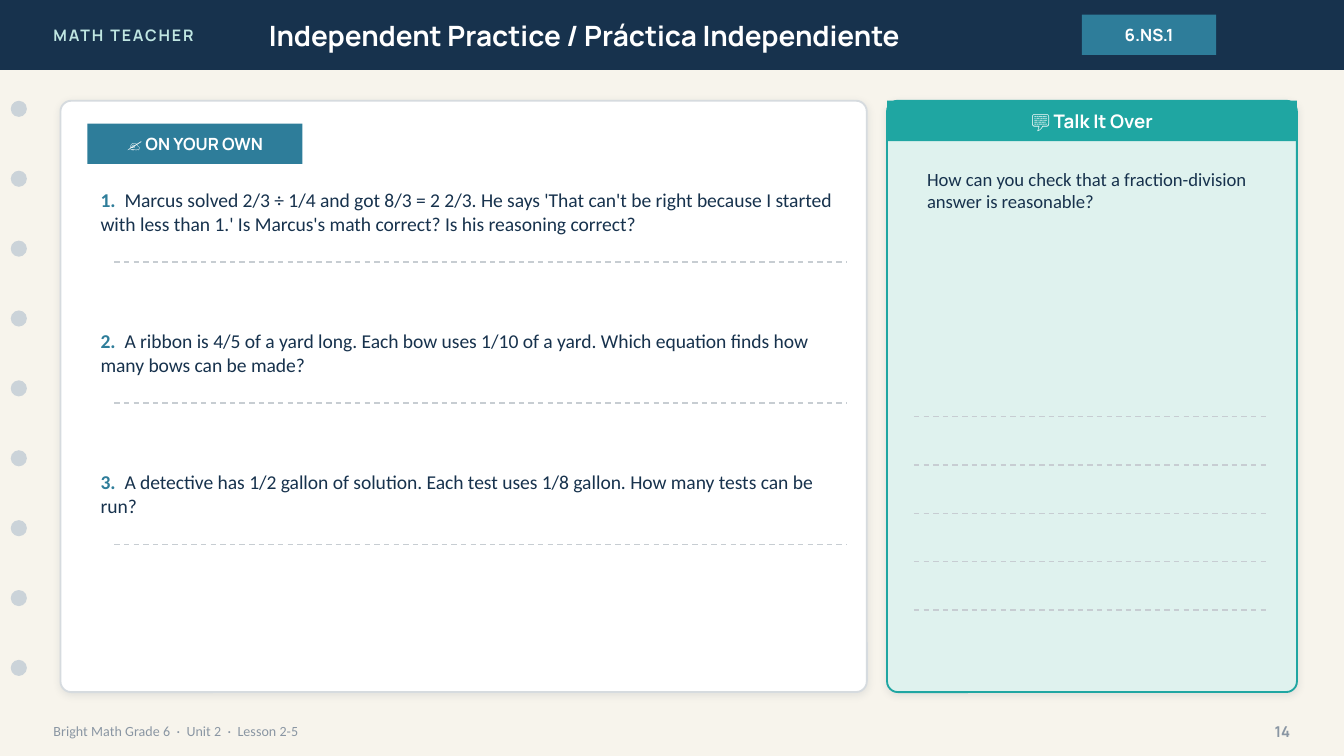
from lxml import etree
from pptx import Presentation
from pptx.dml.color import RGBColor
from pptx.enum.dml import MSO_LINE
from pptx.enum.shapes import MSO_CONNECTOR, MSO_SHAPE as SHAPE
from pptx.enum.text import MSO_ANCHOR as ANCHOR, MSO_AUTO_SIZE, PP_ALIGN as ALIGN
from pptx.oxml import parse_xml
from pptx.oxml.ns import nsdecls, qn
from pptx.util import Inches, Pt

NAVY, BLUE, TEAL = "17324D", "2E7D9A", "1FA6A2"
WHITE, CREAM, MINT, PALE_TEAL = "FFFFFF", "F7F4EC", "DFF2EE", "BFE6E2"
HOLE, RULE, BORDER, MUTED = "CBD3D9", "C7CDD2", "D6DBDF", "8A96A3"
HEAD, BODY = "Manrope", "Calibri"
COLS = 100
BAR_H, TAG_H = 5.2, 3
CARD_TOP, CARD_H, CORNER = 7.5, 44, 0.8

PROBLEMS = [
    "Marcus solved 2/3 ÷ 1/4 and got 8/3 = 2 2/3. He says 'That can't be right because "
    "I started with less than 1.' Is Marcus's math correct? Is his reasoning correct?",
    "A ribbon is 4/5 of a yard long. Each bow uses 1/10 of a yard. "
    "Which equation finds how many bows can be made?",
    "A detective has 1/2 gallon of solution. Each test uses 1/8 gallon. "
    "How many tests can be run?",
]


def rgb(value):
    return RGBColor.from_string(value)


class Page:
    def __init__(self, prs, background):
        self.s = prs.slides.add_slide(prs.slide_layouts[5])
        self.cell = prs.slide_width / COLS
        fill = self.s.background.fill
        fill.solid()
        fill.fore_color.rgb = rgb(background)

    def grid(self, *cells):
        return [round(c * self.cell) for c in cells]

    def set_text(self, sp, runs, align=ALIGN.LEFT, anchor=ANCHOR.MIDDLE):
        tf = sp.text_frame
        tf.word_wrap = True
        tf.auto_size = MSO_AUTO_SIZE.NONE
        tf.vertical_anchor = anchor
        p = tf.paragraphs[0]
        p.alignment = align
        for text, size, font, color, bold in runs:
            r = p.add_run()
            r.text = text
            r.font.size = Pt(size)
            r.font.name = font
            r.font.bold = bold
            r.font.color.rgb = rgb(color)
        return p

    def title(self, box, run):
        sp = self.s.shapes.title
        sp.left, sp.top, sp.width, sp.height = self.grid(*box)
        self.s.shapes._spTree.append(sp._element)
        self.set_text(sp, [run])

    def text(self, box, *runs, **layout):
        return self.set_text(self.s.shapes.add_textbox(*self.grid(*box)), runs, **layout)

    def shape(self, box, fill, kind=SHAPE.RECTANGLE):
        sp = self.s.shapes.add_shape(kind, *self.grid(*box))
        sp.shadow.inherit = False
        sp.fill.solid()
        sp.fill.fore_color.rgb = rgb(fill)
        sp.line.fill.background()
        return sp

    def tag(self, box, fill, label, size=9):
        self.set_text(self.shape(box, fill), [(label, size, HEAD, WHITE, True)], ALIGN.CENTER)

    def card(self, box, fill, border):
        sp = self.shape(box, fill, SHAPE.ROUNDED_RECTANGLE)
        sp.adjustments[0] = CORNER / min(box[2:])
        sp.line.color.rgb = rgb(border)
        sp.line.width = Pt(1)
        effects = sp._element.spPr.find(qn("a:effectLst"))
        effects.append(parse_xml(
            f'<a:outerShdw {nsdecls("a")} blurRad="{Pt(4)}" dist="{Pt(1)}" dir="5400000" '
            'algn="bl" rotWithShape="0"><a:srgbClr val="1C2E42"><a:alpha val="10000"/>'
            '</a:srgbClr></a:outerShdw>'))

    def answer_line(self, left, right, y):
        line = self.s.shapes.add_connector(MSO_CONNECTOR.STRAIGHT, *self.grid(left, y, right, y))
        line.line.color.rgb = rgb(RULE)
        line.line.width = Pt(0.75)
        line.line.dash_style = MSO_LINE.DASH
        etree.SubElement(line._element.spPr, qn("a:effectLst"))


def main():
    prs = Presentation()
    prs.slide_width = Inches(10)
    prs.slide_height = prs.slide_width * 9 // 16
    page = Page(prs, CREAM)

    page.shape((0, 0, COLS, BAR_H), NAVY)
    p = page.text((3, 0, 24, BAR_H), ("MATH TEACHER", 8.5, HEAD, PALE_TEAL, True))
    p.runs[0].font._element.set("spc", "100")
    page.title((19, 0, 56, BAR_H),
               ("Independent Practice / Práctica Independiente", 15, HEAD, WHITE, True))
    page.tag((80.5, 1.1, 10, TAG_H), BLUE, "6.NS.1")

    for i in range(9):
        page.shape((0.8, CARD_TOP + i * BAR_H, 1.2, 1.2), HOLE, SHAPE.OVAL)

    page.text((3, 53, 70, 2.8),
              ("Bright Math Grade 6  ·  Unit 2  ·  Lesson 2-5", 7.5, BODY, MUTED, False))
    page.text((92, 53, 5, 2.8), ("14", 8, HEAD, MUTED, True), align=ALIGN.RIGHT)

    page.card((4.5, CARD_TOP, 60, CARD_H), WHITE, BORDER)
    page.tag((6.5, 9.2, 16, TAG_H), BLUE, "✍️ ON YOUR OWN")
    for i, problem in enumerate(PROBLEMS):
        top = 13.5 + i * 10.5
        page.text((6.5, top, 56.5, 5),
                  (f"{i + 1}.  ", 10.5, BODY, BLUE, True),
                  (problem, 10.5, BODY, NAVY, False), anchor=ANCHOR.TOP)
        page.answer_line(8.5, 63, top + 6)

    page.card((66, CARD_TOP, 30.5, CARD_H), MINT, TEAL)
    page.tag((66, CARD_TOP, 30.5, TAG_H), TEAL, "💬 Talk It Over", 10)
    page.text((68, 12, 27, 17),
              ("How can you check that a fraction-division answer is reasonable?",
               10, BODY, NAVY, False), anchor=ANCHOR.TOP)
    for i in range(5):
        page.answer_line(68, 94.5, 31 + i * 3.6)

    prs.save("out.pptx")


if __name__ == "__main__":
    main()
